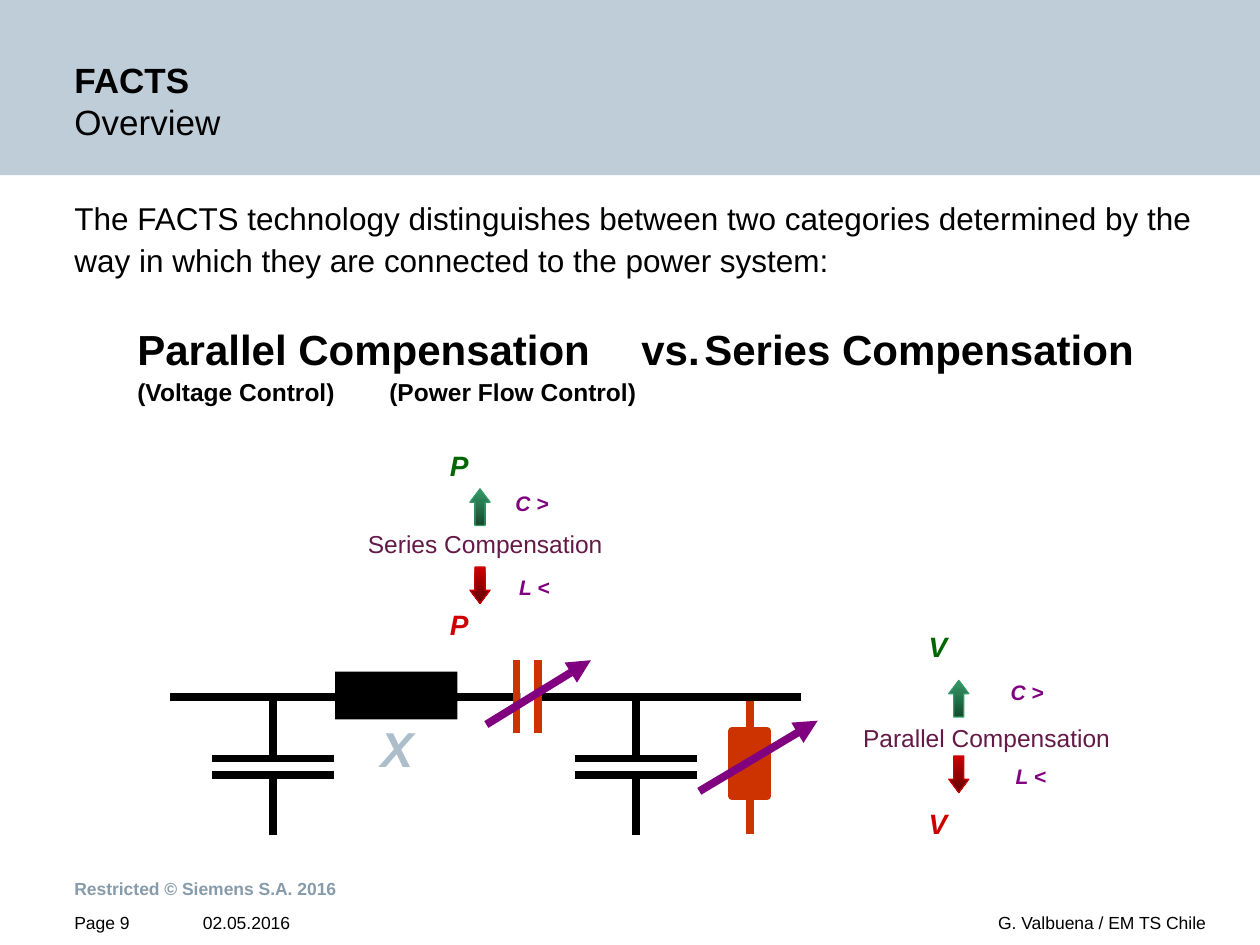
from dataclasses import dataclass

from lxml import etree
from pptx import Presentation
from pptx.dml.color import RGBColor
from pptx.enum.shapes import MSO_CONNECTOR, MSO_SHAPE
from pptx.enum.text import MSO_ANCHOR, MSO_AUTO_SIZE, PP_ALIGN
from pptx.oxml.ns import qn
from pptx.util import Inches, Pt

STRAIGHT = MSO_CONNECTOR.STRAIGHT
RECTANGLE, UP_ARROW, DOWN_ARROW = MSO_SHAPE.RECTANGLE, MSO_SHAPE.UP_ARROW, MSO_SHAPE.DOWN_ARROW
TOP, MIDDLE, BOTTOM = MSO_ANCHOR.TOP, MSO_ANCHOR.MIDDLE, MSO_ANCHOR.BOTTOM
LEFT, RIGHT = PP_ALIGN.LEFT, PP_ALIGN.RIGHT
NO_AUTOSIZE = MSO_AUTO_SIZE.NONE

BLACK = RGBColor(0x00, 0x00, 0x00)
WHITE = RGBColor(0xFF, 0xFF, 0xFF)
BANNER = RGBColor(0xBE, 0xCD, 0xD7)
NOTICE = RGBColor(0x87, 0x9B, 0xAA)
REACTANCE = RGBColor(0xAD, 0xBE, 0xCB)
ORANGE = RGBColor(0xCC, 0x33, 0x00)
PURPLE = RGBColor(0x80, 0x00, 0x80)
PLUM = RGBColor(0x64, 0x19, 0x46)
GREEN = RGBColor(0x00, 0x66, 0x00)
RED = RGBColor(0xCC, 0x00, 0x00)
SEA_GREEN = RGBColor(0x33, 0x99, 0x66)
DARK_GREEN = RGBColor(0x18, 0x47, 0x2F)
DARK_RED = RGBColor(0x5E, 0x00, 0x00)

BOLD_ITALIC = {"bold": True, "italic": True}
LABEL_INSETS = (0.04, 0, 0.04, 0)


@dataclass(frozen=True)
class Label:
    text: str
    box: tuple
    size: float
    color: RGBColor = BLACK
    insets: tuple = (0, 0, 0, 0)
    style: dict | None = None
    align: PP_ALIGN = LEFT
    anchor: MSO_ANCHOR = TOP
    spacing: float = 1.0


@dataclass(frozen=True)
class Wire:
    start: tuple
    end: tuple
    color: RGBColor = BLACK
    arrow: bool = False


@dataclass(frozen=True)
class Compensation:
    title: str
    title_at: tuple
    symbol: str
    arrow_x: float
    arrow_tops: tuple
    symbol_tops: tuple
    capacitor_at: tuple
    inductor_at: tuple


@dataclass(frozen=True)
class BodyLine:
    text: str
    size: float
    bold: bool
    before: float = 0
    tabs: tuple = ()


FOOTERS = (
    Label("02.05.2016", (0, 7.22, 2.79, 0.28), 10, insets=(1.61, 0, 0, 0.13), spacing=1.1),
    Label("Restricted © Siemens S.A. 2016", (0, 6.74, 10, 0.47), 10, NOTICE,
          (0.59, 0.16, 2.32, 0), {"bold": True}, anchor=MIDDLE),
    Label("Page 9", (0, 7.22, 1.52, 0.28), 10, insets=(0.59, 0, 0, 0.13), spacing=1.1),
    Label("G. Valbuena / EM TS Chile", (2.95, 7.22, 7.05, 0.28), 10,
          insets=(0, 0, 0.43, 0.13), align=RIGHT, spacing=1.1),
)
BODY_LINES = (
    BodyLine("The FACTS technology distinguishes between two categories determined by the "
             "way in which they are connected to the power system:", 18, False),
    BodyLine("\tParallel Compensation\tvs.\tSeries Compensation", 24, True, 23, (0.28, 4.38, 5.28)),
    BodyLine("\t(Voltage Control)\t(Power Flow Control)", 14, True, 0, (1.27, 6)),
)
COMPENSATIONS = (
    Compensation("Parallel Compensation", (6.85, 5.74), "V", 7.53, (5.4, 6), (5, 6.4),
                 (7.98, 5.39), (8.02, 6.06)),
    Compensation("Series Compensation", (2.92, 4.2), "P", 3.73, (3.88, 4.5), (3.56, 4.82),
                 (4.05, 3.89), (4.08, 4.56)),
)


def inches(values: tuple) -> list:
    return [Inches(value) for value in values]


def format_font(font, size: float, color: RGBColor, style: dict | None = None) -> None:
    for name, value in {"name": "Arial", "size": Pt(size), **(style or {})}.items():
        setattr(font, name, value)
    font.color.rgb = color


def format_frame(frame, insets: tuple, anchor: MSO_ANCHOR = TOP) -> None:
    left, top, right, bottom = inches(insets)
    settings = {"margin_left": left, "margin_top": top, "margin_right": right,
                "margin_bottom": bottom, "vertical_anchor": anchor,
                "word_wrap": True, "auto_size": NO_AUTOSIZE}
    for name, value in settings.items():
        setattr(frame, name, value)


def place(shape, box: tuple) -> None:
    for name, value in zip(("left", "top", "width", "height"), inches(box)):
        setattr(shape, name, value)


def add_label(slide, label: Label) -> None:
    frame = slide.shapes.add_textbox(*inches(label.box)).text_frame
    format_frame(frame, label.insets, label.anchor)
    paragraph = frame.paragraphs[0]
    paragraph.alignment = label.align
    paragraph.line_spacing = label.spacing
    run = paragraph.add_run()
    run.text = label.text
    format_font(run.font, label.size, label.color, label.style)


def add_block(slide, box: tuple, color: RGBColor, outline: RGBColor | None = None):
    shape = slide.shapes.add_shape(RECTANGLE, *inches(box))
    shape.shadow.inherit = False
    shape.fill.solid()
    shape.fill.fore_color.rgb = color
    if outline is None:
        shape.line.fill.background()
    else:
        shape.line.color.rgb = outline
        shape.line.width = Pt(4.5)
    return shape


def add_wire(slide, wire: Wire) -> None:
    connector = slide.shapes.add_connector(STRAIGHT, *inches(wire.start + wire.end))
    connector.line.color.rgb = wire.color
    connector.line.width = Pt(4.5)
    properties = connector._element.spPr
    if wire.arrow:
        etree.SubElement(properties.find(qn("a:ln")), qn("a:tailEnd"), type="triangle")
    etree.SubElement(properties, qn("a:effectLst"))


def add_trend_arrow(slide, kind: MSO_SHAPE, at: tuple, bright: RGBColor, dark: RGBColor) -> None:
    shape = slide.shapes.add_shape(kind, *inches(at + (0.16, 0.29)))
    shape.shadow.inherit = False
    shape.adjustments[1] = 0.665
    shape.fill.gradient()
    shape.fill.gradient_angle = 270
    for stop, color in zip(shape.fill.gradient_stops, (bright, dark)):
        stop.color.rgb = color
    shape.line.color.rgb = bright
    shape.line.width = Pt(0.75)


def add_compensation(slide, item: Compensation) -> None:
    add_label(slide, Label(item.title, item.title_at + (2.87, 0.23), 14, PLUM))
    trends = ((UP_ARROW, SEA_GREEN, DARK_GREEN, GREEN), (DOWN_ARROW, RED, DARK_RED, RED))
    for trend, arrow_top, symbol_top in zip(trends, item.arrow_tops, item.symbol_tops):
        kind, bright, dark, text_color = trend
        add_trend_arrow(slide, kind, (item.arrow_x, arrow_top), bright, dark)
        add_label(slide, Label(item.symbol, (item.arrow_x - 0.2, symbol_top, 0.51, 0.27), 16,
                               text_color, LABEL_INSETS, BOLD_ITALIC))
    for text, at in (("C >", item.capacitor_at), ("L <", item.inductor_at)):
        add_label(slide, Label(text, at + (0.92, 0.2), 12, PURPLE, LABEL_INSETS, BOLD_ITALIC))


def add_shunt_capacitor(slide, x: float) -> None:
    for top, bottom in ((5.54, 6.02), (6.15, 6.63)):
        add_wire(slide, Wire((x, top), (x, bottom)))
    for y in (6.02, 6.15):
        add_wire(slide, Wire((x - 0.485, y), (x + 0.485, y)))


def add_circuit(slide) -> None:
    for x in (2.17, 5.05):
        add_shunt_capacitor(slide, x)
    add_wire(slide, Wire((1.35, 5.53), (6.36, 5.53)))
    add_block(slide, (2.66, 5.33, 0.97, 0.38), BLACK)
    add_wire(slide, Wire((5.95, 5.56), (5.95, 6.62), ORANGE))
    add_block(slide, (5.81, 5.8, 0.28, 0.52), ORANGE, ORANGE)
    add_wire(slide, Wire((5.55, 6.28), (6.49, 5.72), PURPLE, True))
    add_block(slide, (4.13, 5.39, 0.11, 0.28), WHITE)
    for x in (4.27, 4.1):
        add_wire(slide, Wire((x, 5.24), (x, 5.82), ORANGE))
    add_wire(slide, Wire((3.86, 5.75), (4.69, 5.24), PURPLE, True))
    add_label(slide, Label("X", (2.98, 5.7, 0.65, 0.47), 28, REACTANCE, LABEL_INSETS, BOLD_ITALIC))


def fill_title(title) -> None:
    place(title, (0, 0, 10, 1.39))
    format_frame(title.text_frame, (0.59, 0.43, 2.32, 0.26), BOTTOM)
    paragraph = title.text_frame.paragraphs[0]
    paragraph.alignment = LEFT
    for text, bold in (("FACTS", True), ("Overview", False)):
        if not bold:
            paragraph.add_line_break()
        run = paragraph.add_run()
        run.text = text
        format_font(run.font, 20, BLACK, {"bold": bold})


def fill_body(body) -> None:
    place(body, (0.59, 1.55, 8.98, 5.2))
    frame = body.text_frame
    format_frame(frame, (0, 0, 0, 0))
    for index, line in enumerate(BODY_LINES):
        paragraph = frame.add_paragraph() if index else frame.paragraphs[0]
        properties = paragraph._p.get_or_add_pPr()
        properties.set("marL", "0")
        properties.set("indent", "0")
        etree.SubElement(properties, qn("a:buNone"))
        if line.tabs:
            tabs = etree.SubElement(properties, qn("a:tabLst"))
            for position in line.tabs:
                etree.SubElement(tabs, qn("a:tab"), pos=str(Inches(position)), algn="l")
        paragraph.alignment = LEFT
        paragraph.line_spacing = 1.1
        paragraph.space_before = Pt(line.before)
        run = paragraph.add_run()
        run.text = line.text
        format_font(run.font, line.size, BLACK, {"bold": line.bold})


def main() -> None:
    presentation = Presentation()
    presentation.slide_width, presentation.slide_height = Inches(10), Inches(7.5)
    slide = presentation.slides.add_slide(presentation.slide_layouts[1])
    title, body = slide.placeholders
    banner = add_block(slide, (0, 0, 10, 1.39), BANNER)
    title._element.addprevious(banner._element)
    fill_title(title)
    fill_body(body)
    for footer in FOOTERS:
        add_label(slide, footer)
    add_circuit(slide)
    for item in COMPENSATIONS:
        add_compensation(slide, item)
    presentation.save("out.pptx")


if __name__ == "__main__":
    main()
